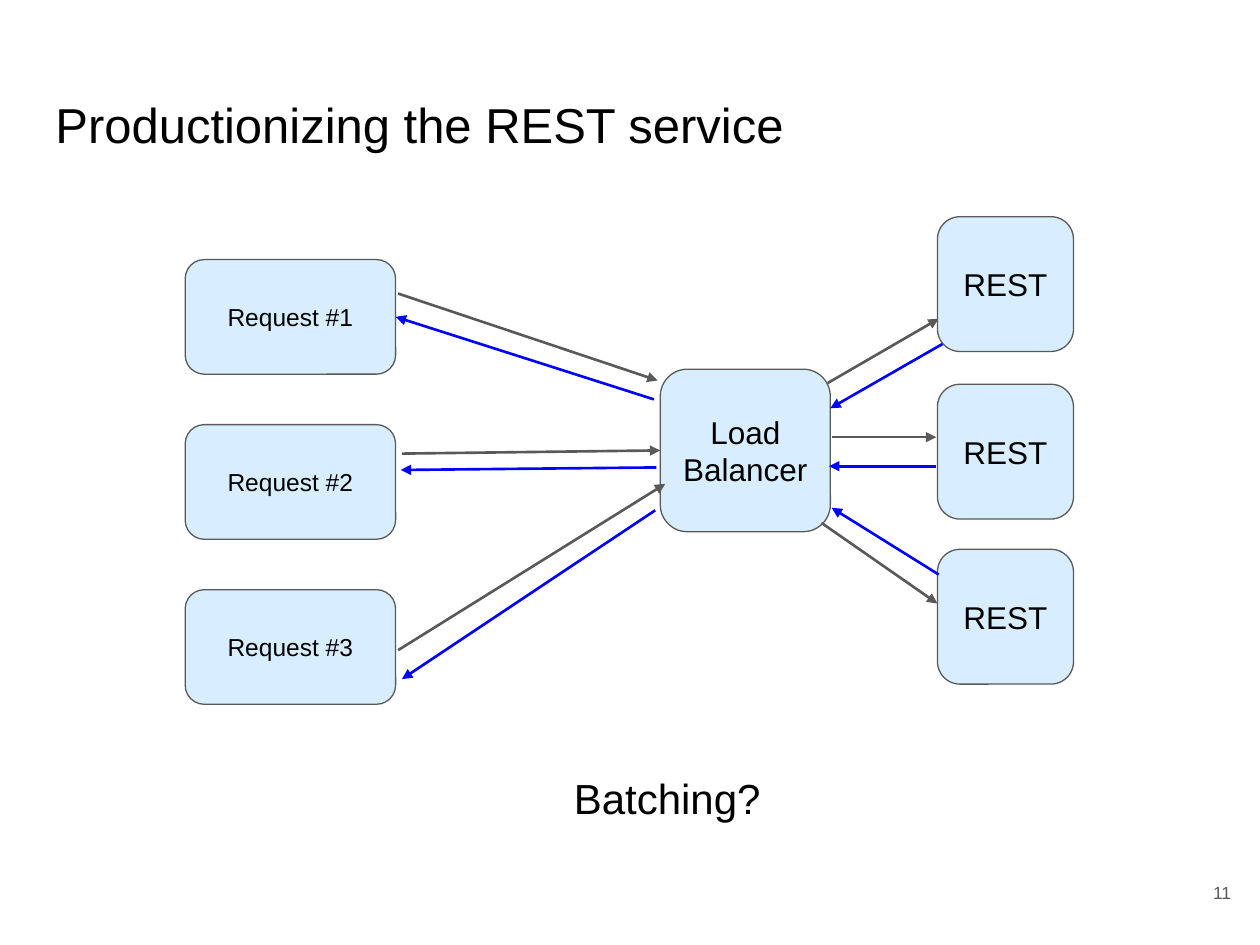
from dataclasses import dataclass
from typing import Any, Optional

import lxml.etree
import pptx
import pptx.dml.color
import pptx.enum.shapes
import pptx.enum.text
import pptx.oxml.ns
import pptx.util

Inches = pptx.util.Inches
Align = pptx.enum.text.PP_ALIGN
Anchor = pptx.enum.text.MSO_ANCHOR

BLACK = "000000"
GRAY = "595959"
PALE_BLUE = "D8EEFF"
REQUEST_COLOR = GRAY
RESPONSE_COLOR = "0000FF"
LEFT_SIDE, RIGHT_SIDE = 1, 3


@dataclass(frozen=True)
class Node:
    label: str
    left: float
    top: float
    width: float
    height: float
    size: int


@dataclass(frozen=True)
class Arrow:
    start: tuple[float, float]
    end: tuple[float, float]
    color: str
    target: Optional[Any] = None
    side: int = LEFT_SIDE


def rgb(color: str) -> pptx.dml.color.RGBColor:
    return pptx.dml.color.RGBColor.from_string(color)


def place(shape: Any, left: float, top: float, width: float, height: float) -> None:
    shape.left, shape.top = Inches(left), Inches(top)
    shape.width, shape.height = Inches(width), Inches(height)


def write(shape: Any, text: str, size: int, align: Any, anchor: Any, color: str = BLACK) -> None:
    frame = shape.text_frame
    frame.word_wrap = True
    frame.auto_size = pptx.enum.text.MSO_AUTO_SIZE.NONE
    frame.vertical_anchor = anchor
    frame.margin_left = frame.margin_right = Inches(0.1)
    frame.margin_top = frame.margin_bottom = Inches(0.1)
    paragraph = frame.paragraphs[0]
    paragraph.text = text
    paragraph.alignment = align
    paragraph.font.name = "Arial"
    paragraph.font.size = pptx.util.Pt(size)
    paragraph.font.color.rgb = rgb(color)


def draw_node(slide: Any, node: Node) -> Any:
    box = slide.shapes.add_shape(
        pptx.enum.shapes.MSO_SHAPE.ROUNDED_RECTANGLE, 0, 0, 0, 0
    )
    place(box, node.left, node.top, node.width, node.height)
    box.shadow.inherit = False
    box.fill.solid()
    box.fill.fore_color.rgb = rgb(PALE_BLUE)
    box.line.color.rgb = rgb(GRAY)
    box.line.width = pptx.util.Pt(0.75)
    write(box, node.label, node.size, Align.CENTER, Anchor.MIDDLE)
    return box


def draw_arrow(slide: Any, arrow: Arrow) -> None:
    connector = slide.shapes.add_connector(
        pptx.enum.shapes.MSO_CONNECTOR.STRAIGHT,
        *(Inches(value) for value in arrow.start + arrow.end),
    )
    if arrow.target is not None:
        connector.end_connect(arrow.target, arrow.side)
    connector.line.color.rgb = rgb(arrow.color)
    connector.line.width = pptx.util.Pt(1.5)
    qn = pptx.oxml.ns.qn
    lxml.etree.SubElement(connector.line._get_or_add_ln(), qn("a:tailEnd"), type="triangle")
    lxml.etree.SubElement(connector._element.spPr, qn("a:effectLst"))


def add_text(slide: Any, text: str, area: tuple[float, float, float, float],
             size: int, align: Any, anchor: Any, color: str = BLACK) -> None:
    box = slide.shapes.add_textbox(0, 0, 0, 0)
    place(box, *area)
    write(box, text, size, align, anchor, color)


def main() -> None:
    presentation = pptx.Presentation()
    presentation.slide_width, presentation.slide_height = Inches(10), Inches(7.5)
    slide = presentation.slides.add_slide(presentation.slide_layouts[5])

    title = slide.shapes.title
    place(title, 0.34, 0.65, 9.32, 0.83)
    write(title, "Productionizing the REST service", 28, Align.LEFT, Anchor.TOP)
    add_text(slide, "11", (9.27, 6.8, 0.6, 0.57), 10, Align.RIGHT, Anchor.MIDDLE, GRAY)

    requests = [
        draw_node(slide, Node(f"Request #{index + 1}", 1.47, 2.06 + 1.31 * index, 1.67, 0.91, 14))
        for index in range(3)
    ]
    add_text(slide, "Batching?", (4.14, 6.03, 2.31, 0.67), 24, Align.CENTER, Anchor.TOP)
    balancer = draw_node(slide, Node("Load\nBalancer", 5.24, 2.93, 1.35, 1.29, 18))

    first_service_arrows = [
        Arrow((6.57, 3.04), (7.45, 2.53), REQUEST_COLOR),
        Arrow((7.48, 2.73), (6.59, 3.24), RESPONSE_COLOR),
    ]
    for arrow in first_service_arrows:
        draw_arrow(slide, arrow)

    for top in (1.72, 3.05, 4.36):
        draw_node(slide, Node("REST", 7.44, top, 1.08, 1.07, 18))

    remaining_arrows = [
        Arrow((6.6, 3.47), (7.43, 3.47), REQUEST_COLOR),
        Arrow((7.43, 3.7), (6.58, 3.7), RESPONSE_COLOR),
        Arrow((6.52, 4.15), (7.44, 4.79), REQUEST_COLOR),
        Arrow((7.45, 4.56), (6.6, 4.03), RESPONSE_COLOR),
        Arrow((3.16, 2.33), (5.22, 3.02), REQUEST_COLOR),
        Arrow((3.19, 3.6), (5.24, 3.57), REQUEST_COLOR, balancer, LEFT_SIDE),
        Arrow((3.16, 5.16), (5.28, 3.84), REQUEST_COLOR),
        Arrow((5.19, 3.17), (3.14, 2.52), RESPONSE_COLOR, requests[0], RIGHT_SIDE),
        Arrow((5.21, 3.71), (3.18, 3.73), RESPONSE_COLOR),
        Arrow((5.2, 4.05), (3.19, 5.39), RESPONSE_COLOR),
    ]
    for arrow in remaining_arrows:
        draw_arrow(slide, arrow)

    presentation.save("out.pptx")


if __name__ == "__main__":
    main()
